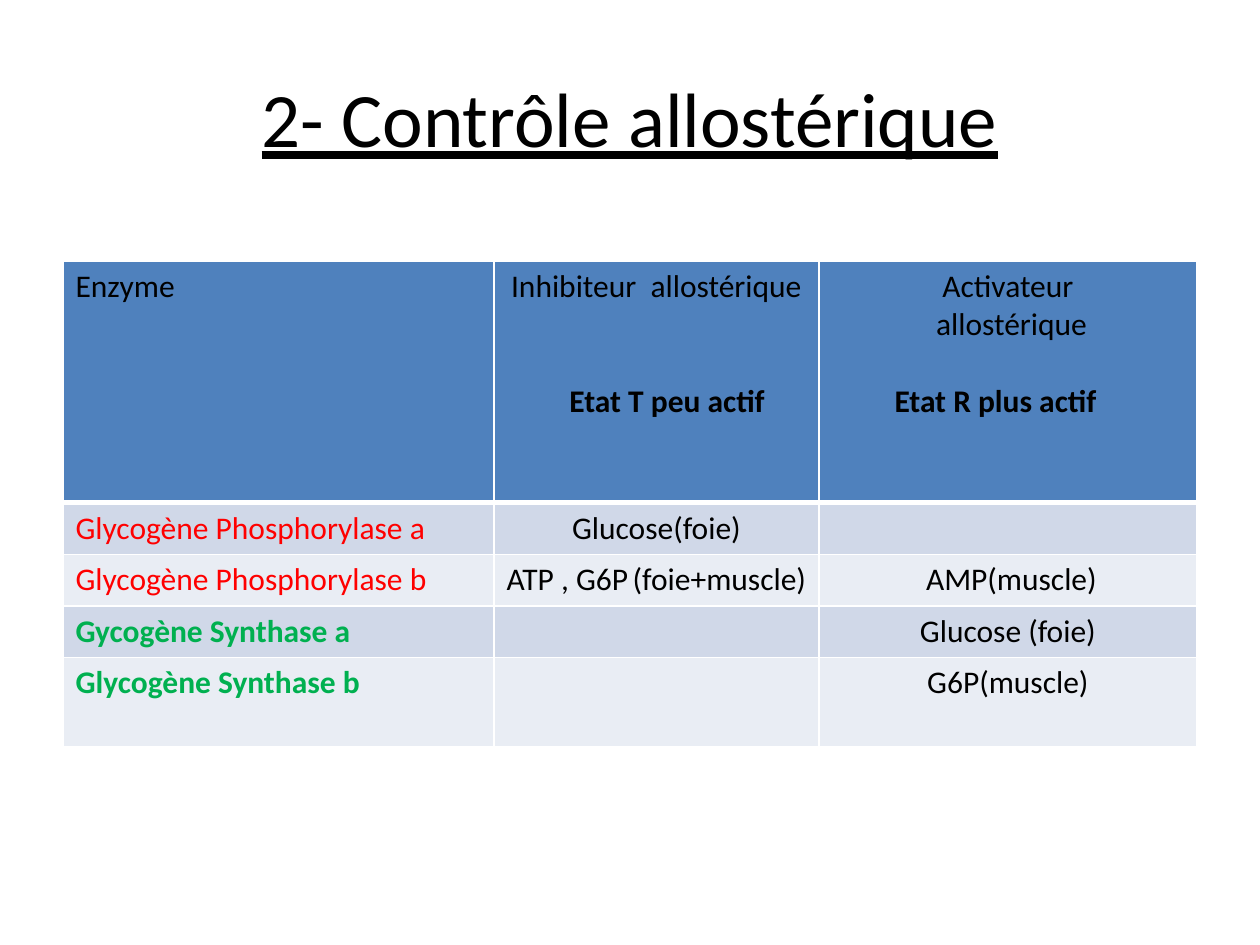
import pptx
import pptx.util
import pptx.dml.color
import pptx.enum.text
import pptx.oxml
import pptx.oxml.ns

Inches, Pt = pptx.util.Inches, pptx.util.Pt
RGBColor = pptx.dml.color.RGBColor
LEFT, CENTER = pptx.enum.text.PP_ALIGN.LEFT, pptx.enum.text.PP_ALIGN.CENTER

BLACK = RGBColor(0x00, 0x00, 0x00)
RED = RGBColor(0xFF, 0x00, 0x00)
GREEN = RGBColor(0x00, 0xB0, 0x50)
WHITE = RGBColor(0xFF, 0xFF, 0xFF)
HEADER = RGBColor(0x4F, 0x81, 0xBD)
BANDS = [RGBColor(0xE9, 0xED, 0xF4), RGBColor(0xD0, 0xD8, 0xE8)]


def add_run(p, text, color=BLACK, **formats):
    r = p.add_run()
    r.text = text
    r.font.color.rgb = color
    for name, value in {"name": "Calibri", "size": Pt(18), "bold": False, **formats}.items():
        setattr(r.font, name, value)


def set_borders(cell, widths):
    tc_pr = cell._tc.get_or_add_tcPr()
    for i, (side, width) in enumerate(widths.items()):
        tc_pr.insert(i, pptx.oxml.parse_xml(
            f'<a:ln{side} {pptx.oxml.ns.nsdecls("a")} w="{Pt(width)}"><a:solidFill>'
            f'<a:srgbClr val="{WHITE}"/></a:solidFill></a:ln{side}>'))


prs = pptx.Presentation()
prs.slide_width, prs.slide_height = Inches(10), Inches(7.5)
s = prs.slides.add_slide(prs.slide_layouts[6])

# Title
sp = s.shapes.add_textbox(Inches(0.5), Inches(0.3), Inches(9), Inches(1.25))
tf = sp.text_frame
tf.word_wrap = True
tf.vertical_anchor = pptx.enum.text.MSO_ANCHOR.MIDDLE
p = tf.paragraphs[0]
p.alignment = CENTER
add_run(p, "2- Contrôle allostérique", size=Pt(44), underline=True)

# Table grid
col_widths = [3.42, 2.58, 3]
row_heights = [1.92, 0.41, 0.41, 0.41, 0.71]
table = s.shapes.add_table(5, 3, Inches(0.5), Inches(2.07), Inches(9),
                           Inches(sum(row_heights))).table
table.first_row = table.horz_banding = False
for col, width in zip(table.columns, col_widths):
    col.width = Inches(width)
for row, height in zip(table.rows, row_heights):
    row.height = Inches(height)

# Cell texts
rows = [
    ["Enzyme", "Inhibiteur  allostérique", "Activateur\n allostérique"],
    ["Glycogène Phosphorylase a", "Glucose(foie)", ""],
    ["Glycogène Phosphorylase b", "ATP , G6P\t(foie+muscle)", " AMP(muscle)"],
    ["Gycogène Synthase a", "", "Glucose (foie)"],
    ["Glycogène Synthase b", "", "G6P(muscle)"],
]
enzyme_colors = [BLACK, RED, RED, GREEN, GREEN]
for i, texts in enumerate(rows):
    for j, text in enumerate(texts):
        cell = table.cell(i, j)
        cell.fill.solid()
        cell.fill.fore_color.rgb = BANDS[i % 2] if i else HEADER
        set_borders(cell, {"L": 1, "R": 1, "T": 1, "B": 1 if i else 3})
        for k, line in enumerate(text.split("\n")):
            p = cell.text_frame.add_paragraph() if k else cell.text_frame.paragraphs[0]
            p.alignment = CENTER if j else LEFT
            if line:
                color = BLACK if j else enzyme_colors[i]
                add_run(p, line, color, bold=color == GREEN)

# Indented state lines in the header
for j, state, gap in [(1, "Etat T peu actif", 44), (2, "Etat R plus actif", 22)]:
    p = table.cell(0, j).text_frame.add_paragraph()
    p.space_before = Pt(gap)
    p._p.get_or_add_pPr().set("marL", str(Inches(0.5)))
    add_run(p, state, bold=True)

prs.save("out.pptx")
